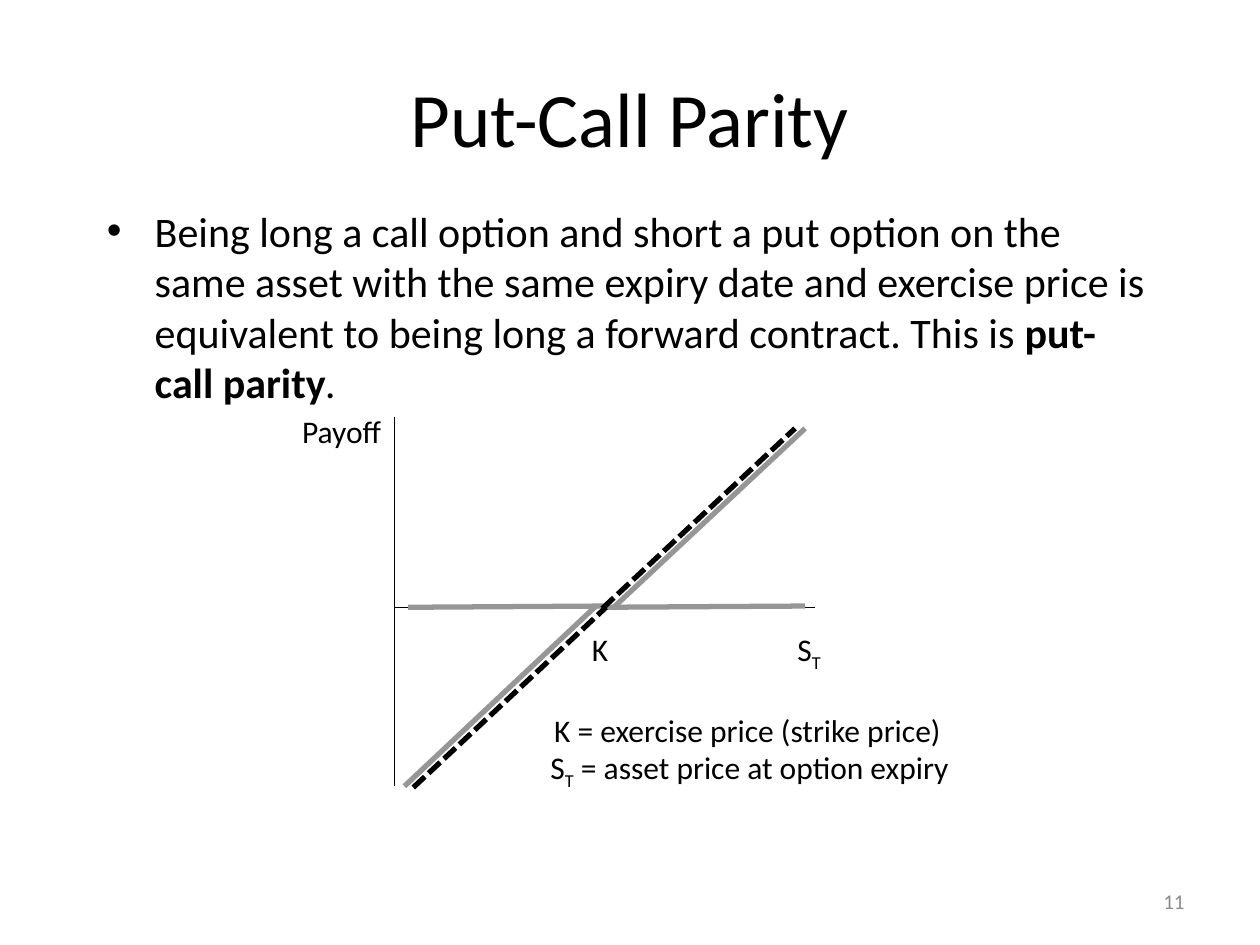
import pptx
import pptx.util
import pptx.dml.color
import pptx.enum.dml
import pptx.enum.shapes
import pptx.enum.text
import pptx.oxml.ns
from lxml import etree

Inches = pptx.util.Inches
Pt = pptx.util.Pt
Align = pptx.enum.text.PP_ALIGN
Anchor = pptx.enum.text.MSO_ANCHOR
BLACK = pptx.dml.color.RGBColor(0x00, 0x00, 0x00)
GRAY = pptx.dml.color.RGBColor(0x96, 0x96, 0x96)
NUMBER_GRAY = pptx.dml.color.RGBColor(0x8C, 0x8C, 0x8C)
FONT = "Calibri"

# Each run is (text, style); style is "", "bold", "italic" or "sub".
TITLE = [("Put-Call Parity", "")]
STATEMENT = [
    ("Being long a call option and short a put option on the same asset with "
     "the same expiry date and exercise price is equivalent to being long a "
     "forward contract. This is ", ""),
    ("put-call parity", "bold"),
    (".", "italic"),
]
PAGE_NUMBER = [("11", "")]

# (left, top, width, runs)
LABELS = [
    (4.27, 5.89, 3.41, [("S", ""), ("T", "sub"), (" = asset price at option expiry", "")]),
    (4.30, 5.59, 3.31, [("K = exercise price (strike price)", "")]),
    (6.23, 4.95, 0.40, [("S", ""), ("T", "sub")]),
    (2.30, 3.22, 0.84, [("Payoff", "")]),
    (4.60, 4.95, 0.34, [("K", "")]),
]
LABEL_HEIGHT = 0.4

# (start x, start y, end x, end y)
AXES = [(3.13, 4.82, 6.47, 4.82), (3.13, 3.31, 3.13, 6.24)]
LONG_CALL = [(3.24, 4.82, 4.81, 4.81), (4.86, 4.83, 6.39, 3.40)]
SHORT_PUT = [(3.21, 6.24, 4.73, 4.81), (4.78, 4.82, 6.39, 4.81)]
FORWARD = [(4.78, 4.83, 6.31, 3.40), (3.28, 6.25, 4.81, 4.82)]


def add_text(page, place, runs, size, color=BLACK, align=Align.LEFT,
             anchor=Anchor.TOP, wrap=True):
    box = page.shapes.add_textbox(*(Inches(length) for length in place))
    frame = box.text_frame
    frame.word_wrap = wrap
    frame.vertical_anchor = anchor
    para = frame.paragraphs[0]
    para.alignment = align
    para.font.name = FONT
    para.font.size = Pt(size)
    para.font.color.rgb = color
    for text, style in runs:
        span = para.add_run()
        span.text = text
        if style == "bold":
            span.font.bold = True
        elif style == "italic":
            span.font.italic = True
        elif style == "sub":
            span.font._element.set("baseline", "-25000")
    return para


def add_bullet(para, indent):
    properties = para._p.get_or_add_pPr()
    properties.set("marL", str(Inches(indent)))
    properties.set("indent", str(-Inches(indent)))
    bullet_font = etree.Element(pptx.oxml.ns.qn("a:buFont"), typeface="Arial")
    bullet = etree.Element(pptx.oxml.ns.qn("a:buChar"), char="•")
    properties.insert(0, bullet_font)
    properties.insert(1, bullet)


def add_lines(page, segments, color, width, dash=None):
    for segment in segments:
        line = page.shapes.add_connector(
            pptx.enum.shapes.MSO_CONNECTOR.STRAIGHT,
            *(Inches(length) for length in segment))
        line.line.color.rgb = color
        line.line.width = Pt(width)
        if dash:
            line.line.dash_style = dash
        etree.SubElement(line._element.spPr, pptx.oxml.ns.qn("a:effectLst"))


def main():
    deck = pptx.Presentation()
    deck.slide_width, deck.slide_height = Inches(10), Inches(7.5)
    page = deck.slides.add_slide(deck.slide_layouts[6])

    add_text(page, (0.5, 0.3, 9, 1.25), TITLE, 44,
             align=Align.CENTER, anchor=Anchor.MIDDLE)
    statement = add_text(page, (0.75, 1.58, 8.5, 4.67), STATEMENT, 24)
    add_bullet(statement, 0.38)
    add_text(page, (7.17, 6.95, 2.33, 0.4), PAGE_NUMBER, 12, NUMBER_GRAY,
             Align.RIGHT, Anchor.MIDDLE)

    add_lines(page, AXES, BLACK, 0.75)
    add_lines(page, LONG_CALL + SHORT_PUT, GRAY, 3)
    add_lines(page, FORWARD, BLACK, 3, pptx.enum.dml.MSO_LINE.SQUARE_DOT)
    for left, top, width, runs in LABELS:
        add_text(page, (left, top, width, LABEL_HEIGHT), runs, 18, wrap=False)

    deck.save("out.pptx")


if __name__ == "__main__":
    main()
